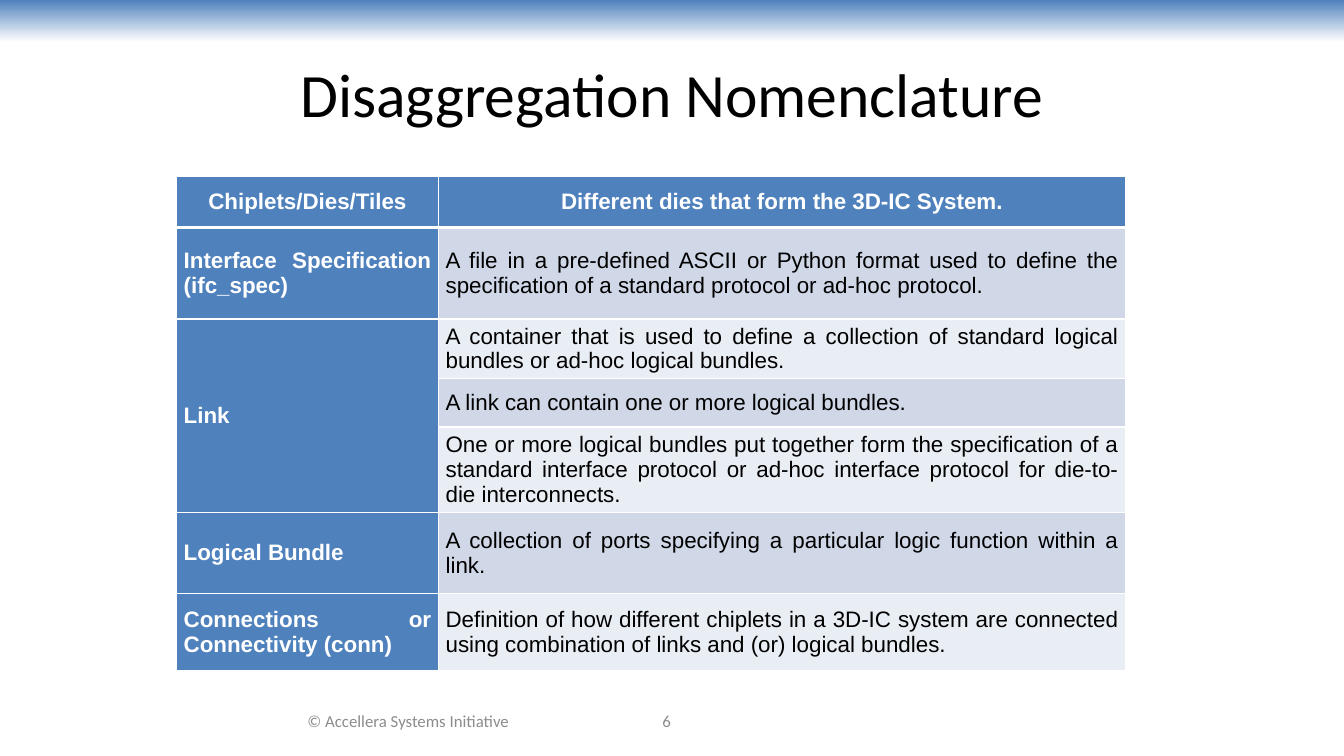
from dataclasses import dataclass

from lxml import etree
from pptx import Presentation
from pptx import util as u
from pptx.dml.color import RGBColor
from pptx.enum import shapes, text
from pptx.oxml import ns


@dataclass(frozen=True)
class Theme:
    blue: str = "4F81BD"
    bands: tuple = ("E9EDF4", "D0D8E8")
    white: str = "FFFFFF"
    black: str = "000000"
    grey: str = "8C8C8C"
    heading_font: str = "Calibri"
    table_font: str = "Arial"
    title_size: int = 44
    table_size: int = 16
    footer_size: int = 12


CENTER = text.PP_ALIGN.CENTER
JUSTIFY = text.PP_ALIGN.JUSTIFY

HEADER = ("Chiplets/Dies/Tiles", "Different dies that form the 3D-IC System.")
# Each term with its definitions; a term spans all of its definition rows
TERMS = [
    ("Interface Specification (ifc_spec)", [
        "A file in a pre-defined ASCII or Python format used to define the "
        "specification of a standard protocol or ad-hoc protocol."]),
    ("Link", [
        "A container that is used to define a collection of standard logical "
        "bundles or ad-hoc logical bundles.",
        "A link can contain one or more logical bundles.",
        "One or more logical bundles put together form the specification of a "
        "standard interface protocol or ad-hoc interface protocol for "
        "die-to-die interconnects."]),
    ("Logical Bundle", [
        "A collection of ports specifying a particular logic function within "
        "a link."]),
    ("Connections or Connectivity (conn)", [
        "Definition of how different chiplets in a 3D-IC system are connected "
        "using combination of links and (or) logical bundles."]),
]
COLUMN_WIDTHS = (6.6, 17.32)
ROW_HEIGHTS = (1.28, 2.31, 1.5, 1.22, 2.16, 2.03, 1.96)


def write(frame, words, *, font, size, color, bold=False, align=CENTER):
    frame.word_wrap = True
    para = frame.paragraphs[0]
    para.alignment = align
    span = para.add_run()
    span.text = words
    span.font.name = font
    span.font.size = u.Pt(size)
    span.font.bold = bold
    span.font.color.rgb = RGBColor.from_string(color)


class SlideBuilder:
    def __init__(self, deck, theme):
        self.theme = theme
        self.page = deck.slides.add_slide(deck.slide_layouts[5])

    def band(self, left, top, width, height):
        box = self.page.shapes.add_shape(
            shapes.MSO_SHAPE.RECTANGLE, *map(u.Cm, (left, top, width, height)))
        box.shadow.inherit = False
        box.line.fill.background()
        box.fill.gradient()
        box.fill.gradient_angle = 270
        colors = (self.theme.blue, self.theme.white)
        for stop, position, color in zip(box.fill.gradient_stops, (0, 1), colors):
            stop.position = position
            stop.color.rgb = RGBColor.from_string(color)

    def title(self, words, left, top, width, height):
        box = self.page.shapes.title
        box.left, box.top, box.width, box.height = map(
            u.Cm, (left, top, width, height))
        box.text_frame.vertical_anchor = text.MSO_ANCHOR.MIDDLE
        write(box.text_frame, words, font=self.theme.heading_font,
              size=self.theme.title_size, color=self.theme.black)

    def footer(self, words, left, top, width, height):
        box = self.page.shapes.add_textbox(*map(u.Cm, (left, top, width, height)))
        box.text_frame.vertical_anchor = text.MSO_ANCHOR.MIDDLE
        write(box.text_frame, words, font=self.theme.heading_font,
              size=self.theme.footer_size, color=self.theme.grey)

    def borders(self, cell, bottom):
        properties = cell._tc.get_or_add_tcPr()
        for side, points in (("L", 1), ("R", 1), ("T", 1), ("B", bottom)):
            line = etree.SubElement(properties, ns.qn(f"a:ln{side}"),
                                    w=str(u.Pt(points)))
            fill = etree.SubElement(line, ns.qn("a:solidFill"))
            etree.SubElement(fill, ns.qn("a:srgbClr"), val=self.theme.white)

    def cell(self, cell, words, fill, *, color, bold, align, bottom=1):
        self.borders(cell, bottom)
        cell.fill.solid()
        cell.fill.fore_color.rgb = RGBColor.from_string(fill)
        cell.vertical_anchor = text.MSO_ANCHOR.MIDDLE
        cell.margin_left = cell.margin_right = u.Cm(0.18)
        cell.margin_top = cell.margin_bottom = 0
        write(cell.text_frame, words, font=self.theme.table_font,
              size=self.theme.table_size, color=color, bold=bold, align=align)

    def glossary(self, left, top):
        theme = self.theme
        grid = self.page.shapes.add_table(
            len(ROW_HEIGHTS), len(COLUMN_WIDTHS), u.Cm(left), u.Cm(top),
            u.Cm(sum(COLUMN_WIDTHS)), u.Cm(sum(ROW_HEIGHTS))).table
        for column, width in zip(grid.columns, COLUMN_WIDTHS):
            column.width = u.Cm(width)
        for row, height in zip(grid.rows, ROW_HEIGHTS):
            row.height = u.Cm(height)

        # Header row
        for column, words in enumerate(HEADER):
            self.cell(grid.cell(0, column), words, theme.blue, color=theme.white,
                      bold=True, align=CENTER, bottom=3)

        # Terms and definitions
        first = 1
        for term, definitions in TERMS:
            last = first + len(definitions) - 1
            if last > first:
                grid.cell(first, 0).merge(grid.cell(last, 0))
            self.cell(grid.cell(first, 0), term, theme.blue, color=theme.white,
                      bold=True, align=JUSTIFY)
            for row, words in enumerate(definitions, first):
                self.cell(grid.cell(row, 1), words, theme.bands[row % 2],
                          color=theme.black, bold=False, align=JUSTIFY)
            first = last + 1


def main():
    deck = Presentation()
    deck.slide_width, deck.slide_height = u.Cm(33.87), u.Cm(19.05)
    slide = SlideBuilder(deck, Theme())

    # Top band and title
    slide.band(0, 0, 33.87, 1.06)
    slide.title("Disaggregation Nomenclature", 1.7, 0.76, 30.48, 3.18)

    # Table of terms
    slide.glossary(4.45, 4.45)

    # Footer
    slide.footer("© Accellera Systems Initiative", 6.2, 17.65, 8.18, 1.02)
    slide.footer("6", 13.55, 17.65, 6.5, 1.02)

    deck.save("out.pptx")


if __name__ == "__main__":
    main()
